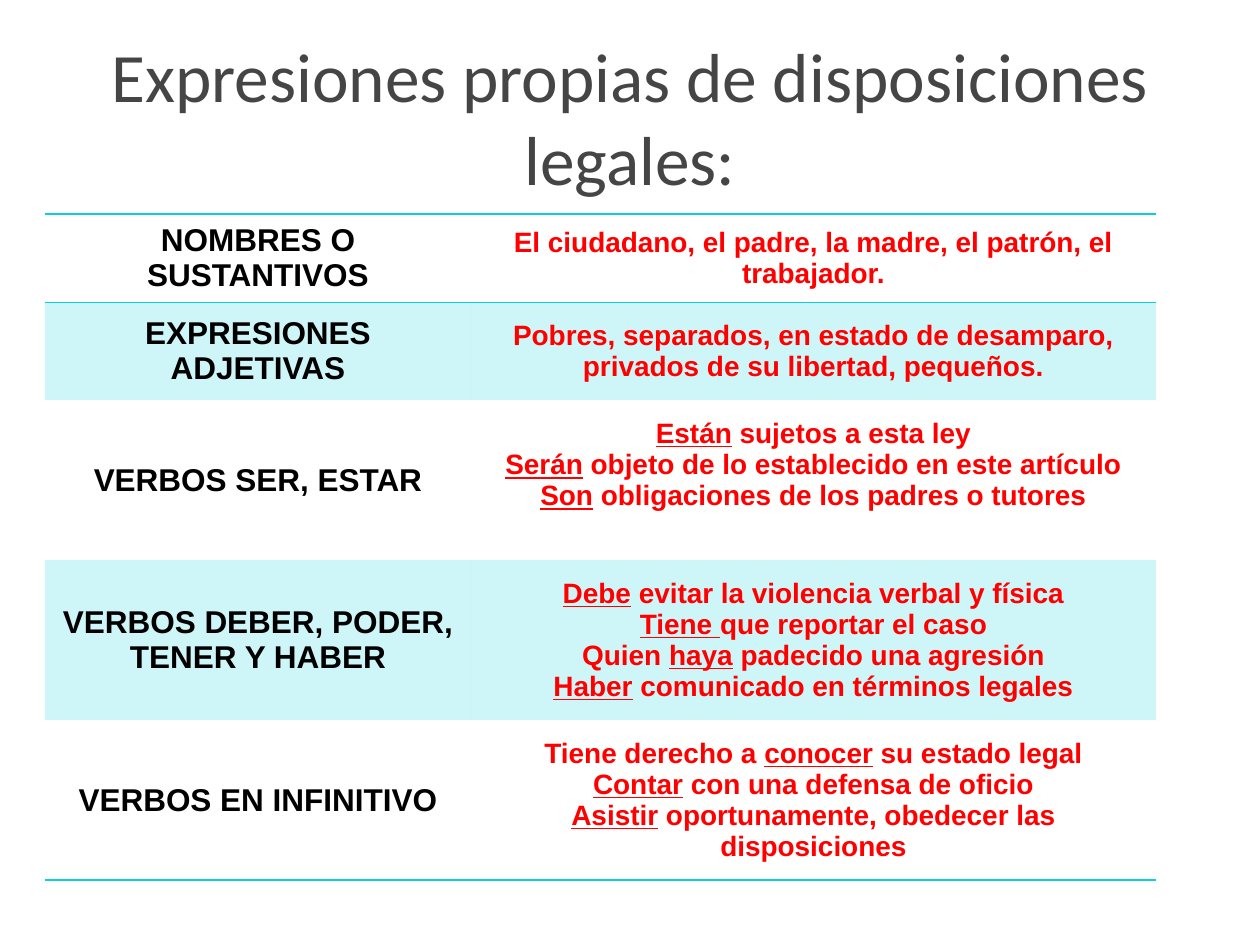
from lxml.etree import SubElement
from pptx import Presentation
from pptx.dml.color import RGBColor
from pptx.enum.text import MSO_ANCHOR as Anchor, PP_ALIGN as Align
from pptx.oxml.ns import qn
from pptx.util import Emu, Pt

COLORS = {"title": "454545", "label": "000000", "example": "FF0000", "accent": "0BD0D9"}
NO_STYLE = "{2D5ABB26-0587-4C30-8999-92F81FD0307C}"
ROW_HEIGHTS = [86, 98, 160, 160, 160]
COLUMN_WIDTHS = [426, 685]
# Words between underscores are underlined.
ROWS = [
    ("NOMBRES O SUSTANTIVOS",
     ["El ciudadano, el padre, la madre, el patrón, el trabajador."]),
    ("EXPRESIONES ADJETIVAS",
     ["Pobres, separados, en estado de desamparo, privados de su libertad, pequeños."]),
    ("VERBOS SER, ESTAR",
     ["_Están_ sujetos a esta ley",
      "_Serán_ objeto de lo establecido en este artículo",
      "_Son_ obligaciones de los padres o tutores"]),
    ("VERBOS DEBER, PODER, TENER Y HABER",
     ["_Debe_ evitar la violencia verbal y física",
      "_Tiene _que reportar el caso",
      "Quien _haya_ padecido una agresión",
      "_Haber_ comunicado en términos legales"]),
    ("VERBOS EN INFINITIVO",
     ["Tiene derecho a _conocer_ su estado legal",
      "_Contar_ con una defensa de oficio",
      "_Asistir_ oportunamente, obedecer las disposiciones"]),
]


def px(length):
    return Emu(round(length * 914400 / 126))


def write(frame, lines, font, size, color, bold):
    """Write centred paragraphs, underlining what stands between underscores."""
    for number, line in enumerate(lines):
        para = frame.add_paragraph() if number else frame.paragraphs[0]
        para.alignment = Align.CENTER
        for index, piece in enumerate(line.split("_")):
            if piece:
                span = para.add_run()
                span.text = piece
                span.font.name = font
                span.font.size = Pt(size)
                span.font.bold = bold
                span.font.underline = index % 2 == 1
                span.font.color.rgb = RGBColor.from_string(COLORS[color])


deck = Presentation()
deck.slide_width, deck.slide_height = px(1260), px(945)
page = deck.slides.add_slide(deck.slide_layouts[6])

title = page.shapes.add_textbox(px(63), px(38), px(1134), px(157)).text_frame
title.word_wrap = True
title.vertical_anchor = Anchor.MIDDLE
write(title, ["Expresiones propias de disposiciones legales:"], "Calibri", 39.6, "title", False)

table = page.shapes.add_table(
    len(ROWS), 2, px(45), px(214), px(sum(COLUMN_WIDTHS)), px(sum(ROW_HEIGHTS))).table
table.first_row = table.horz_banding = False
table._tbl.tblPr.find(qn("a:tableStyleId")).text = NO_STYLE
for column, width in zip(table.columns, COLUMN_WIDTHS):
    column.width = px(width)

for row, (label, examples) in enumerate(ROWS):
    table.rows[row].height = px(ROW_HEIGHTS[row])
    edges = {0: ["a:lnT", "a:lnB"], len(ROWS) - 1: ["a:lnB"]}.get(row, [])
    for column in range(2):
        cell = table.cell(row, column)
        cell.vertical_anchor = Anchor.MIDDLE
        properties = cell._tc.get_or_add_tcPr()
        for edge in edges:
            line = SubElement(properties, qn(edge), w=str(Pt(1)))
            SubElement(SubElement(line, qn("a:solidFill")), qn("a:srgbClr"), val=COLORS["accent"])
        if row % 2:
            cell.fill.solid()
            cell.fill.fore_color.rgb = RGBColor.from_string(COLORS["accent"])
            tint = properties.find(qn("a:solidFill")).find(qn("a:srgbClr"))
            SubElement(tint, qn("a:alpha"), val="20000")
        else:
            cell.fill.background()
    write(table.cell(row, 0).text_frame, [label], "Arial", 18, "label", True)
    write(table.cell(row, 1).text_frame, examples, "Arial", 16, "example", True)

# The examples with "ser" and "estar" sit one line above the foot of their cell.
table.cell(2, 1).margin_bottom = px(37)

deck.save("out.pptx")
